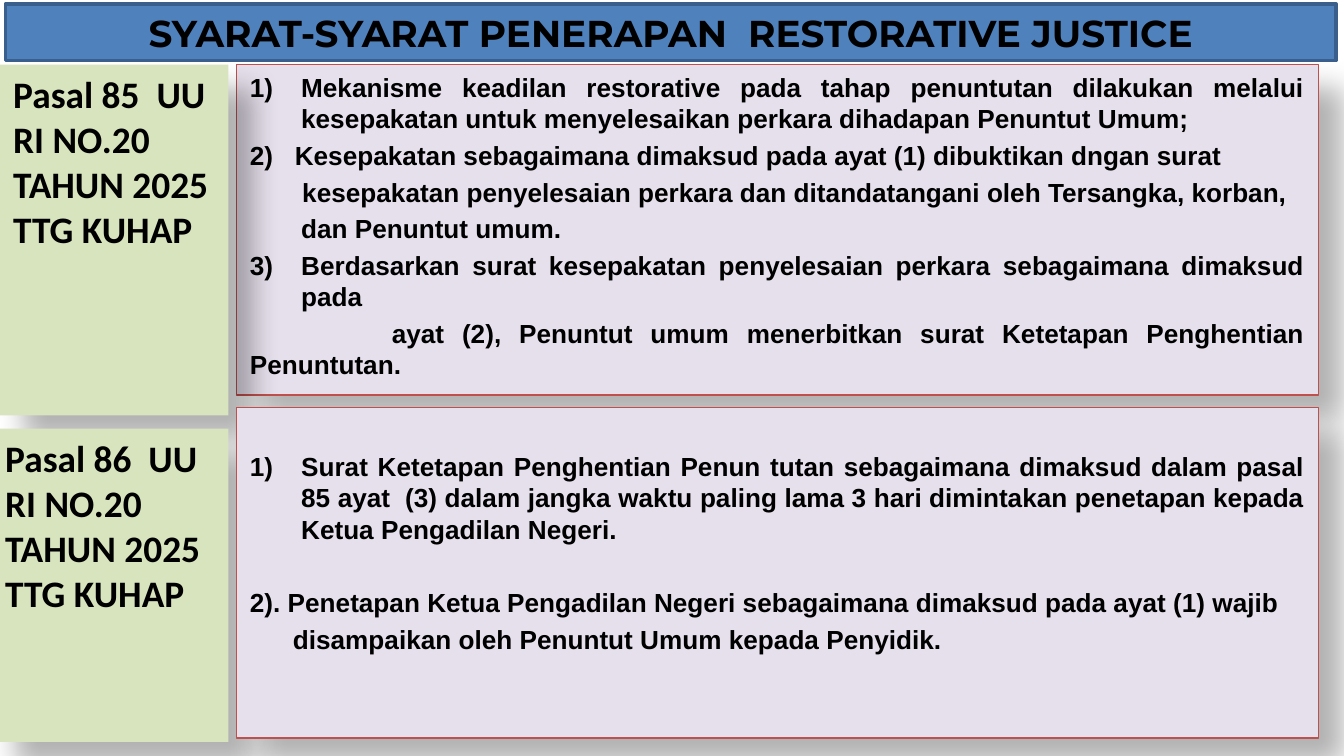
from lxml import etree
from pptx import Presentation
from pptx.dml.color import RGBColor
from pptx.enum.shapes import MSO_SHAPE
from pptx.enum.text import MSO_ANCHOR, MSO_AUTO_SIZE, PP_ALIGN
from pptx.oxml.ns import qn
from pptx.util import Pt

RECT = MSO_SHAPE.RECTANGLE
TOP, MIDDLE = MSO_ANCHOR.TOP, MSO_ANCHOR.MIDDLE
FIXED = MSO_AUTO_SIZE.NONE
LEFT, CENTER, FULL = PP_ALIGN.LEFT, PP_ALIGN.CENTER, PP_ALIGN.JUSTIFY

COLORS = {
    "text": "000000", "blue": "4F81BD", "navy": "3A5F8C",
    "lilac": "E6E0EC", "red": "C0504D", "green": "D7E4BD",
}
TITLE = "SYARAT-SYARAT PENERAPAN  RESTORATIVE JUSTICE"
LABELS = [
    ("Pasal 85  UU RI NO.20 TAHUN 2025 TTG KUHAP", (0, 34.6, 122.4, 187.9)),
    ("Pasal 86  UU RI NO.20 TAHUN 2025 TTG KUHAP", (-4.3, 229.7, 126.7, 167.8)),
]
HANG = 27.4
LISTS = [
    {"top": 34.6, "inset": 3.6, "items": [
        {"text": "Mekanisme keadilan restorative pada tahap penuntutan dilakukan melalui "
                 "kesepakatan untuk menyelesaikan perkara dihadapan Penuntut Umum;",
         "left": HANG, "first": -HANG, "start": 1},
        {"text": "2)\tKesepakatan sebagaimana dimaksud pada ayat (1) dibuktikan dngan surat",
         "left": 24, "first": -24},
        {"text": "kesepakatan penyelesaian perkara dan ditandatangani oleh Tersangka, korban,",
         "left": 28},
        {"text": "dan Penuntut umum.", "left": HANG},
        {"text": "Berdasarkan surat kesepakatan penyelesaian perkara sebagaimana dimaksud pada",
         "left": HANG, "first": -HANG, "start": 3},
        {"text": "ayat (2), Penuntut umum menerbitkan surat Ketetapan Penghentian Penuntutan.",
         "first": 76},
    ]},
    {"top": 218.2, "inset": 23, "items": [
        {"text": "Surat Ketetapan Penghentian Penun tutan sebagaimana dimaksud dalam pasal "
                 "85 ayat  (3) dalam jangka waktu paling lama 3 hari dimintakan penetapan "
                 "kepada Ketua Pengadilan Negeri.",
         "left": HANG, "first": -HANG, "start": 1},
        {"text": "2). Penetapan Ketua Pengadilan Negeri sebagaimana dimaksud pada ayat (1) wajib",
         "before": 22.5},
        {"text": "disampaikan oleh Penuntut Umum kepada Penyidik.", "left": 23},
    ]},
]


def color(name):
    return RGBColor.from_string(COLORS[name])


def style(box, area, fill, line=None, width=0, anchor=TOP):
    box.left, box.top, box.width, box.height = map(Pt, area)
    box.fill.solid()
    box.fill.fore_color.rgb = color(fill)
    if line:
        box.line.color.rgb = color(line)
        box.line.width = Pt(width)
    else:
        box.line.fill.background()
    frame = box.text_frame
    frame.word_wrap = True
    frame.auto_size = FIXED
    frame.vertical_anchor = anchor
    return frame


def shade(box):
    box.shadow.inherit = False
    effect = box._element.spPr.find(qn("a:effectLst"))
    outer = etree.SubElement(effect, qn("a:outerShdw"), blurRad=str(Pt(15)),
                             dist=str(Pt(18)), dir=str(45 * 60000),
                             algn="tl", rotWithShape="0")
    tint = etree.SubElement(outer, qn("a:srgbClr"), val=COLORS["text"])
    etree.SubElement(tint, qn("a:alpha"), val="30000")


def write(para, text, size, face, align):
    para.alignment = align
    run = para.add_run()
    run.text = text
    run.font.size = Pt(size)
    run.font.name = face
    run.font.bold = True
    run.font.color.rgb = color("text")


def indent(para, item):
    props = para._p.get_or_add_pPr()
    props.set("marL", str(Pt(item.get("left", 0))))
    props.set("indent", str(Pt(item.get("first", 0))))
    if "start" in item:
        etree.SubElement(props, qn("a:buFont"), typeface="+mj-lt")
        etree.SubElement(props, qn("a:buAutoNum"), type="arabicParenR",
                         startAt=str(item["start"]))
    else:
        etree.SubElement(props, qn("a:buNone"))


def fill_list(box, data):
    frame = style(box, (126.7, data["top"], 579.6, 177.1), "lilac", "red", 0.75)
    frame.margin_top = Pt(data["inset"])
    shade(box)
    for pos, item in enumerate(data["items"]):
        para = frame.add_paragraph() if pos else frame.paragraphs[0]
        indent(para, item)
        if not pos:
            para.space_before = Pt(0)
        elif "before" in item:
            para.space_before = Pt(item["before"])
        write(para, item["text"], 14, "Arial", FULL)


def main():
    deck = Presentation()
    deck.slide_width, deck.slide_height = Pt(720), Pt(405)
    slide = deck.slides.add_slide(deck.slide_layouts[3])
    title, upper, lower = slide.placeholders

    frame = style(title, (2.9, 2.2, 712.8, 30.2), "blue", "navy", 2, MIDDLE)
    write(frame.paragraphs[0], TITLE, 20, "Montserrat", CENTER)

    for box, data in zip((upper, lower), LISTS):
        fill_list(box, data)

    for text, area in LABELS:
        label = slide.shapes.add_shape(RECT, *map(Pt, area))
        frame = style(label, area, "green")
        shade(label)
        write(frame.paragraphs[0], text, 20, "Calibri", LEFT)

    slide.shapes._spTree.append(lower._element)
    deck.save("out.pptx")


if __name__ == "__main__":
    main()
